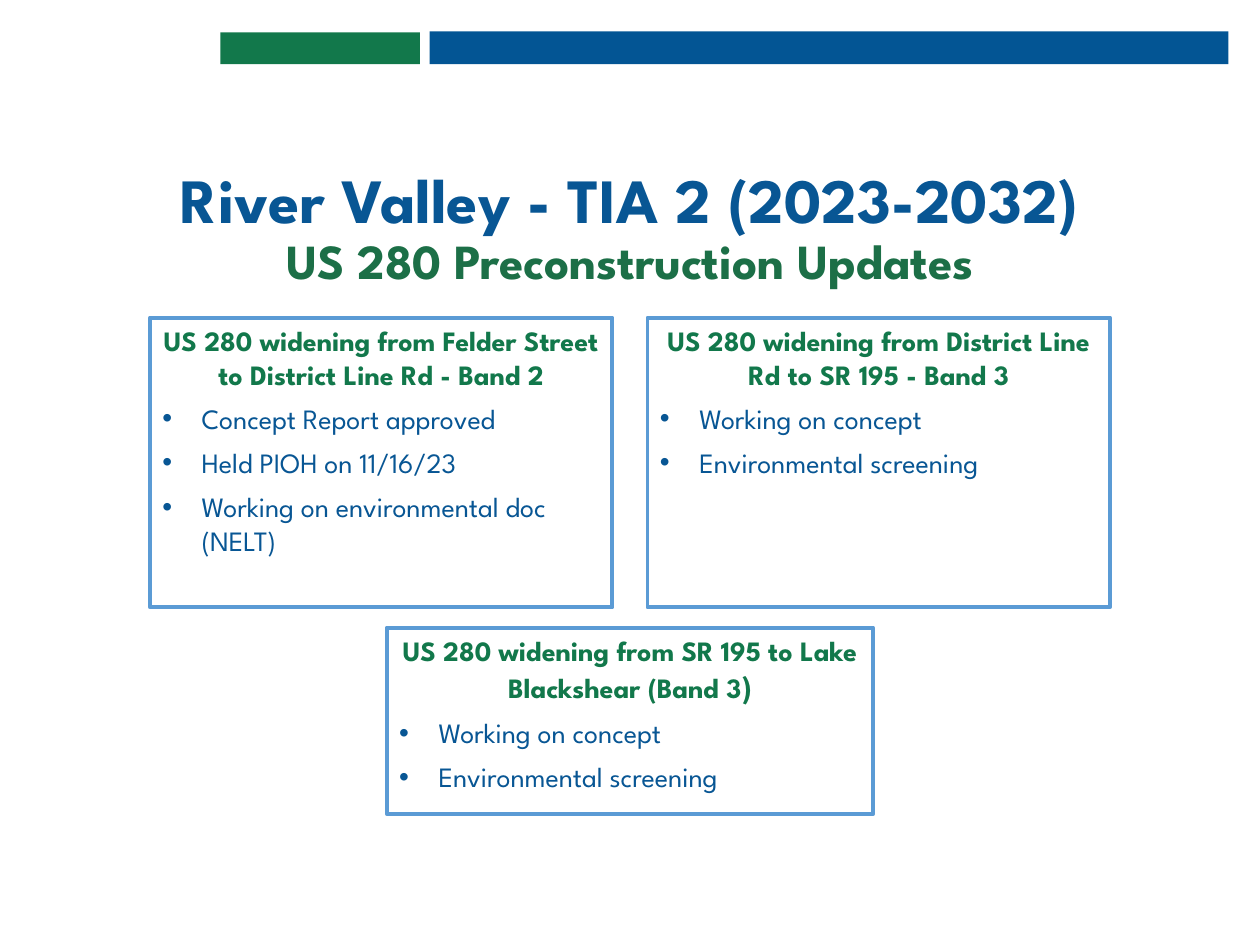
from dataclasses import dataclass

from lxml import etree
from pptx import Presentation
from pptx.dml import color
from pptx.enum import shapes, text
from pptx.oxml import ns
from pptx.util import Pt


@dataclass(frozen=True)
class Theme:
    font: str = "League Spartan"
    bar_blue: str = "035594"
    blue: str = "085694"
    green: str = "12784B"
    subtitle_green: str = "1C6F47"
    white: str = "FFFFFF"
    border: str = "5B9BD5"
    title_size: float = 36
    subtitle_size: float = 28
    body_size: float = 16
    large_size: float = 18


THEME = Theme()
BULLET_INDENT = 22.5


def rgb(value):
    return color.RGBColor.from_string(value)


def format_run(run, size, colour, bold=False):
    run.font.name = THEME.font
    run.font.size = Pt(size)
    run.font.bold = bold
    run.font.color.rgb = rgb(colour)


def add_rectangle(slide, box, fill, line=None):
    shape = slide.shapes.add_shape(shapes.MSO_SHAPE.RECTANGLE, *map(Pt, box))
    shape.shadow.inherit = False
    shape.fill.solid()
    shape.fill.fore_color.rgb = rgb(fill)
    if line:
        shape.line.color.rgb = rgb(line)
        shape.line.width = Pt(2.25)
    else:
        shape.line.fill.background()
    return shape


def add_bullet(paragraph):
    properties = paragraph._p.get_or_add_pPr()
    properties.set("marL", str(Pt(BULLET_INDENT)))
    properties.set("indent", str(-Pt(BULLET_INDENT)))
    font = etree.SubElement(properties, ns.qn("a:buFont"))
    font.set("typeface", "Arial")
    etree.SubElement(properties, ns.qn("a:buChar")).set("char", "•")


def add_header_bars(slide, box):
    """Short green bar and long blue bar, aligned at the bottom."""
    left, top, width, height = box
    green_width, gap = 114, 5.5
    blue_left = green_width + gap
    add_rectangle(slide, (left + blue_left, top, width - blue_left, height),
                  THEME.bar_blue)
    add_rectangle(slide, (left, top + 0.5, green_width, height - 0.5),
                  THEME.green)


def add_title(slide, box, title, subtitle):
    frame = slide.shapes.add_textbox(*map(Pt, box)).text_frame
    frame.word_wrap = True
    frame.vertical_anchor = text.MSO_ANCHOR.BOTTOM
    paragraph = frame.paragraphs[0]
    paragraph.text = f"{title}\v{subtitle}"
    paragraph.alignment = text.PP_ALIGN.CENTER
    paragraph.line_spacing = 0.9
    title_run, subtitle_run = paragraph.runs
    format_run(title_run, THEME.title_size, THEME.blue, True)
    format_run(subtitle_run, THEME.subtitle_size, THEME.subtitle_green, True)


def add_project_card(slide, box, heading, updates, large_ending=""):
    """Bordered box with a centred heading and bulleted updates."""
    shape = add_rectangle(slide, box, THEME.white, THEME.border)
    frame = shape.text_frame
    frame.word_wrap = True
    frame.vertical_anchor = text.MSO_ANCHOR.TOP
    frame.text = "\n".join([heading, *updates])
    first, *bullets = frame.paragraphs
    first.alignment = text.PP_ALIGN.CENTER
    format_run(first.runs[0], THEME.body_size, THEME.green, True)
    if large_ending:
        ending = first.add_run()
        ending.text = large_ending
        format_run(ending, THEME.large_size, THEME.green, True)
    for paragraph in bullets:
        add_bullet(paragraph)
        paragraph.alignment = text.PP_ALIGN.LEFT
        paragraph.space_before = Pt(6)
        format_run(paragraph.runs[0], THEME.body_size, THEME.blue)


def add_project_cards(slide, box):
    """Two cards side by side with a third centred below them."""
    left, top, width, height = box
    card_width, upper_height = 264.3, 165.6
    lower_width, lower_height = 278, 106.5
    screening = ["Working on concept", "Environmental screening"]
    add_project_card(
        slide, (left + width - card_width, top, card_width, upper_height),
        "US 280 widening from District Line Rd to SR 195 - Band 3", screening)
    add_project_card(
        slide, (left, top, card_width, upper_height),
        "US 280 widening from Felder Street to District Line Rd - Band 2",
        ["Concept Report approved", "Held PIOH on 11/16/23",
         "Working on environmental doc (NELT)"])
    add_project_card(
        slide, (left + (width - lower_width) / 2, top + height - lower_height,
                lower_width, lower_height),
        "US 280 widening from SR 195 to Lake Blackshear (Band 3", screening,
        large_ending=")")


def main():
    presentation = Presentation()
    presentation.slide_width = Pt(720)
    presentation.slide_height = Pt(540)
    slide = presentation.slides.add_slide(presentation.slide_layouts[6])

    add_header_bars(slide, (126, 18, 576, 18.7))
    add_title(slide, (71.3, 88.6, 577.4, 80.6),
              "River Valley - TIA 2 (2023-2032)",
              "US 280 Preconstruction Updates")
    add_project_cards(slide, (85.7, 181.5, 548.6, 283.6))

    presentation.save("out.pptx")


if __name__ == "__main__":
    main()
